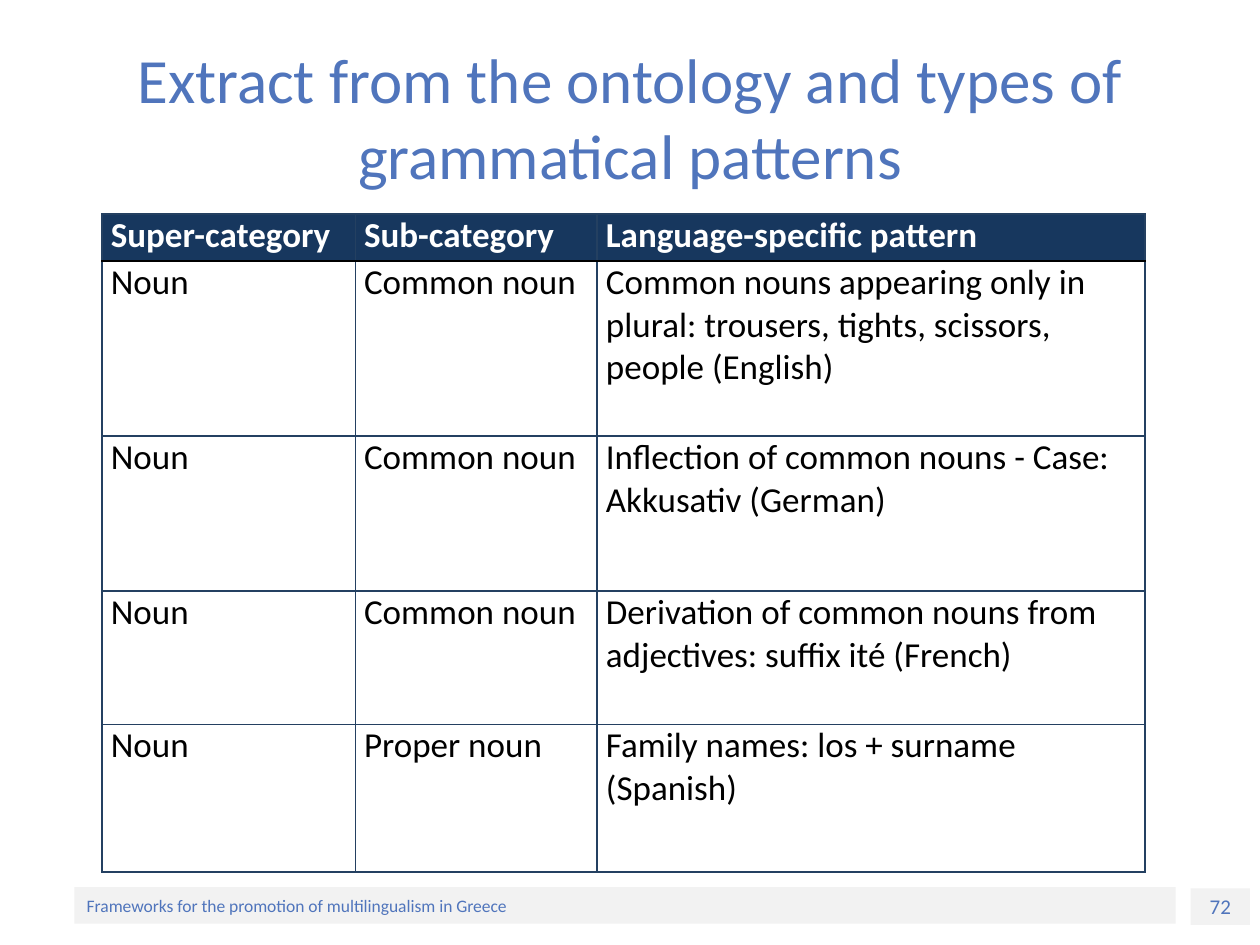
from typing import NamedTuple

from lxml import etree
from pptx import Presentation
from pptx.dml.color import RGBColor
from pptx.enum.shapes import MSO_SHAPE
from pptx.enum.text import MSO_ANCHOR, PP_ALIGN
from pptx.oxml.ns import qn
from pptx.util import Inches, Pt

RECTANGLE = MSO_SHAPE.RECTANGLE
MIDDLE = MSO_ANCHOR.MIDDLE
LEFT, CENTER = PP_ALIGN.LEFT, PP_ALIGN.CENTER
TITLE_ONLY = 5
FONT = "Calibri"
COLORS = {
    "accent": "5075BC",
    "band": "F2F2F2",
    "header": "17375E",
    "border": "244061",
    "white": "FFFFFF",
    "black": "000000",
}


class Area(NamedTuple):
    left: float
    top: float
    width: float
    height: float

    def lengths(self):
        return [Inches(value) for value in self]


class FooterBox(NamedTuple):
    text: str
    area: Area
    size: int
    align: PP_ALIGN


class Pattern(NamedTuple):
    super_category: str
    sub_category: str
    example: str


TITLE = "Extract from the ontology and types of grammatical patterns"
TITLE_AREA = Area(0.5, 0.3, 9, 1.25)
FOOTERS = [
    FooterBox("72", Area(9.45, 7.05, 0.47, 0.29), 12, CENTER),
    FooterBox("Frameworks for the promotion of multilingualism in Greece",
              Area(0.59, 7.04, 8.74, 0.29), 10, LEFT),
]
COLUMN_WIDTHS = [2.01, 1.92, 4.35]
ROW_HEIGHTS = [0.37, 1.39, 1.23, 1.06, 1.17]
TABLE_AREA = Area(0.81, 1.7, sum(COLUMN_WIDTHS), sum(ROW_HEIGHTS))
PATTERNS = [
    Pattern("Super-category", "Sub-category", "Language-specific pattern"),
    Pattern("Noun", "Common noun",
            "Common nouns appearing only in plural: trousers, tights, scissors, people (English)"),
    Pattern("Noun", "Common noun", "Inflection of common nouns - Case: Akkusativ (German)"),
    Pattern("Noun", "Common noun",
            "Derivation of common nouns from adjectives: suffix ité (French)"),
    Pattern("Noun", "Proper noun", "Family names: los + surname (Spanish)"),
]


def color(name: str) -> RGBColor:
    return RGBColor.from_string(COLORS[name])


def write(frame, text: str, size: int, color_name: str, align=LEFT, bold=False) -> None:
    frame.text = text
    paragraph = frame.paragraphs[0]
    paragraph.alignment = align
    font = paragraph.font
    font.name, font.size, font.bold = FONT, Pt(size), bold
    font.color.rgb = color(color_name)


def add_footer(page, footer: FooterBox) -> None:
    box = page.shapes.add_shape(RECTANGLE, *footer.area.lengths())
    box.shadow.inherit = False
    box.fill.solid()
    box.fill.fore_color.rgb = color("band")
    box.line.fill.background()
    frame = box.text_frame
    frame.word_wrap = True
    frame.vertical_anchor = MIDDLE
    frame.margin_top = frame.margin_bottom = 0
    write(frame, footer.text, footer.size, "accent", footer.align)


def set_borders(cell, **sides: str) -> None:
    """Draw 1 pt borders; each side names its colour."""
    properties = cell._tc.get_or_add_tcPr()
    for side, color_name in sides.items():
        line = etree.SubElement(properties, qn(f"a:ln{side}"), w=str(Pt(1)))
        fill = etree.SubElement(line, qn("a:solidFill"))
        etree.SubElement(fill, qn("a:srgbClr"), val=COLORS[color_name])


def add_pattern_table(page) -> None:
    table = page.shapes.add_table(
        len(ROW_HEIGHTS), len(COLUMN_WIDTHS), *TABLE_AREA.lengths()).table
    table.horz_banding = False
    for column, width in zip(table.columns, COLUMN_WIDTHS):
        column.width = Inches(width)
    for index, (row, height, pattern) in enumerate(zip(table.rows, ROW_HEIGHTS, PATTERNS)):
        row.height = Inches(height)
        is_header = index == 0
        for cell, text in zip(row.cells, pattern):
            cell.margin_left = cell.margin_right = Inches(0.07)
            cell.margin_top = cell.margin_bottom = 0
            write(cell.text_frame, text, 20, "white" if is_header else "black", bold=is_header)
            set_borders(cell, L="border", R="border",
                        T="black" if index == 1 else "border",
                        B="black" if is_header else "border")
            cell.fill.solid()
            cell.fill.fore_color.rgb = color("header" if is_header else "white")


def main() -> None:
    deck = Presentation()
    deck.slide_width, deck.slide_height = Inches(10), Inches(7.5)
    page = deck.slides.add_slide(deck.slide_layouts[TITLE_ONLY])
    for footer in FOOTERS:
        add_footer(page, footer)
    title = page.shapes.title
    title.left, title.top, title.width, title.height = TITLE_AREA.lengths()
    title.text_frame.vertical_anchor = MIDDLE
    write(title.text_frame, TITLE, 36, "accent", CENTER)
    add_pattern_table(page)
    deck.save("out.pptx")


if __name__ == "__main__":
    main()
